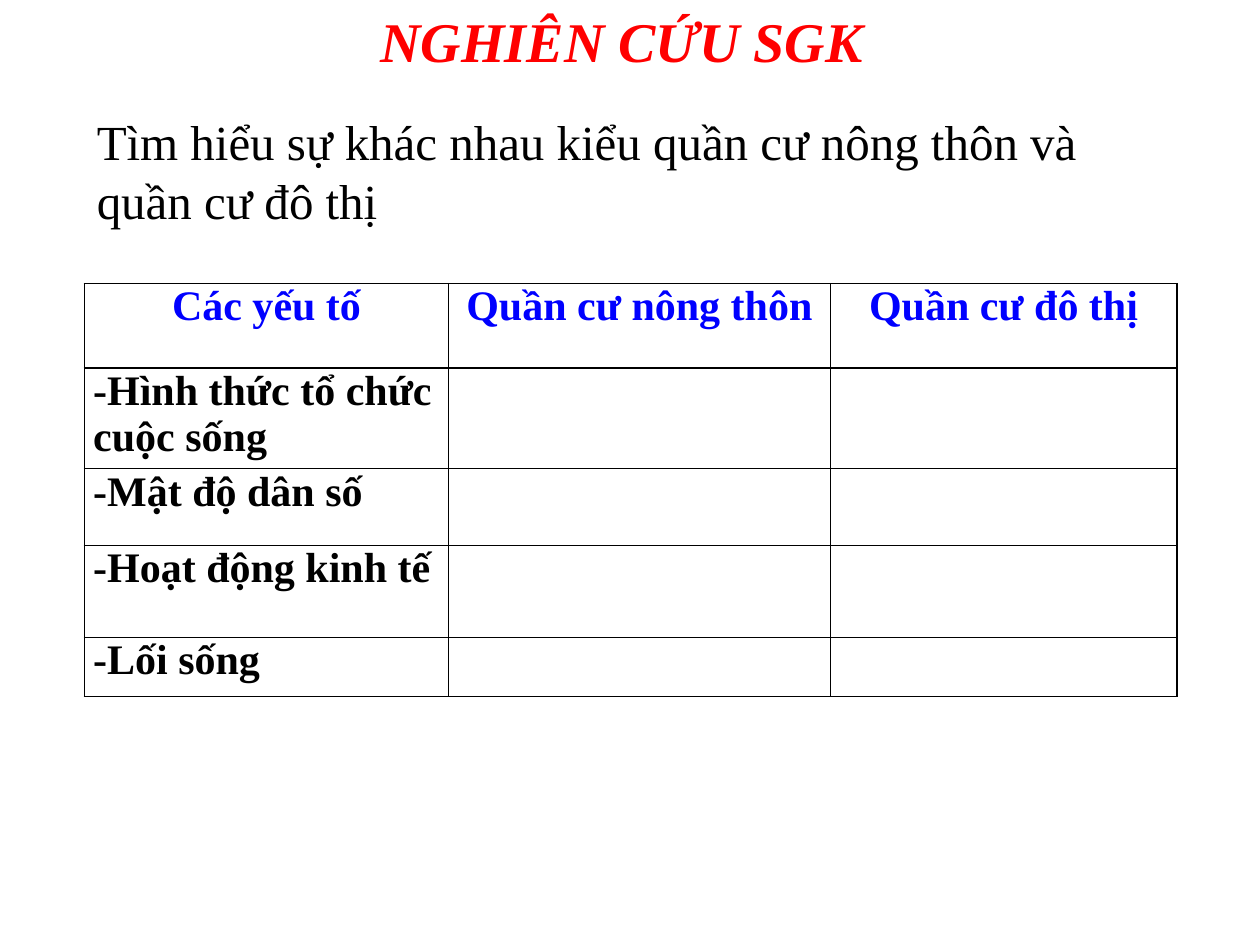
from typing import NamedTuple

from lxml import etree
from pptx import Presentation
from pptx.dml.color import RGBColor
from pptx.enum.text import MSO_ANCHOR, PP_ALIGN
from pptx.oxml.ns import qn
from pptx.util import Inches, Pt

LEFT, CENTER = PP_ALIGN.LEFT, PP_ALIGN.CENTER
TOP, MIDDLE = MSO_ANCHOR.TOP, MSO_ANCHOR.MIDDLE
FONT = "Times New Roman"
COLORS = {"title": "FF0000", "header": "0000FF", "ink": "000000"}
MARGIN = 0.67
CONTENT_WIDTH = 8.67
COLUMN_WIDTHS = (2.89, 3.03, 2.75)


class Row(NamedTuple):
    height: float
    texts: tuple[str, ...]


HEADER = Row(0.67, ("Các yếu tố", "Quần cư nông thôn", "Quần cư đô thị"))
FACTORS = (
    Row(0.8, ("-Hình thức tổ chức cuộc sống", "", "")),
    Row(0.61, ("-Mật độ dân số", "", "")),
    Row(0.73, ("-Hoạt động kinh tế", "", "")),
    Row(0.47, ("-Lối sống", "", "")),
)


def place(shape, left: float, top: float, width: float, height: float) -> None:
    shape.left, shape.top = Inches(left), Inches(top)
    shape.width, shape.height = Inches(width), Inches(height)


def write(frame, text: str, *, size: float, color: str, bold: bool = False,
          italic: bool = False, align=LEFT) -> None:
    frame.word_wrap = True
    para = frame.paragraphs[0]
    para.alignment = align
    para.font.size = Pt(size)
    if text:
        span = para.add_run()
        span.text = text
        font = span.font
        font.name, font.size = FONT, Pt(size)
        font.bold, font.italic = bold, italic
        font.color.rgb = RGBColor.from_string(COLORS[color])


def add_borders(cell) -> None:
    """Draw a thin line on all four sides, ahead of the cell's fill element."""
    properties = cell._tc.get_or_add_tcPr()
    for index, side in enumerate(("a:lnL", "a:lnR", "a:lnT", "a:lnB")):
        line = etree.Element(qn(side), w=str(Pt(1)))
        fill = etree.SubElement(line, qn("a:solidFill"))
        etree.SubElement(fill, qn("a:srgbClr"), val=COLORS["ink"])
        properties.insert(index, line)


def add_comparison(page, rows: tuple[Row, ...]) -> None:
    height = sum(row.height for row in rows)
    table = page.shapes.add_table(
        len(rows), len(COLUMN_WIDTHS), Inches(MARGIN), Inches(2.25),
        Inches(CONTENT_WIDTH), Inches(height)).table
    table.first_row = table.horz_banding = False
    for column, width in zip(table.columns, COLUMN_WIDTHS):
        column.width = Inches(width)
    for table_row, row in zip(table.rows, rows):
        table_row.height = Inches(row.height)
        is_header = row is HEADER
        for cell, text in zip(table_row.cells, row.texts):
            cell.margin_left = cell.margin_right = Inches(0.07)
            cell.margin_top = cell.margin_bottom = 0
            cell.fill.background()
            add_borders(cell)
            write(cell.text_frame, text, size=24, bold=True,
                  color="header" if is_header else "ink",
                  align=CENTER if is_header else LEFT)


def main() -> None:
    deck = Presentation()
    deck.slide_width, deck.slide_height = Inches(10), Inches(7.5)
    page = deck.slides.add_slide(deck.slide_layouts[5])

    title = page.shapes.title
    place(title, 2.92, 0, 4.5, 0.64)
    title.text_frame.vertical_anchor = TOP
    write(title.text_frame, "NGHIÊN CỨU SGK", size=32, color="title",
          bold=True, italic=True)

    task = page.shapes.add_textbox(0, 0, 0, 0)
    place(task, MARGIN, 0.83, CONTENT_WIDTH, 1.04)
    task.text_frame.vertical_anchor = MIDDLE
    write(task.text_frame,
          "Tìm hiểu sự khác nhau kiểu quần cư nông thôn và quần cư đô thị",
          size=28, color="ink")

    add_comparison(page, (HEADER, *FACTORS))
    deck.save("out.pptx")


if __name__ == "__main__":
    main()
